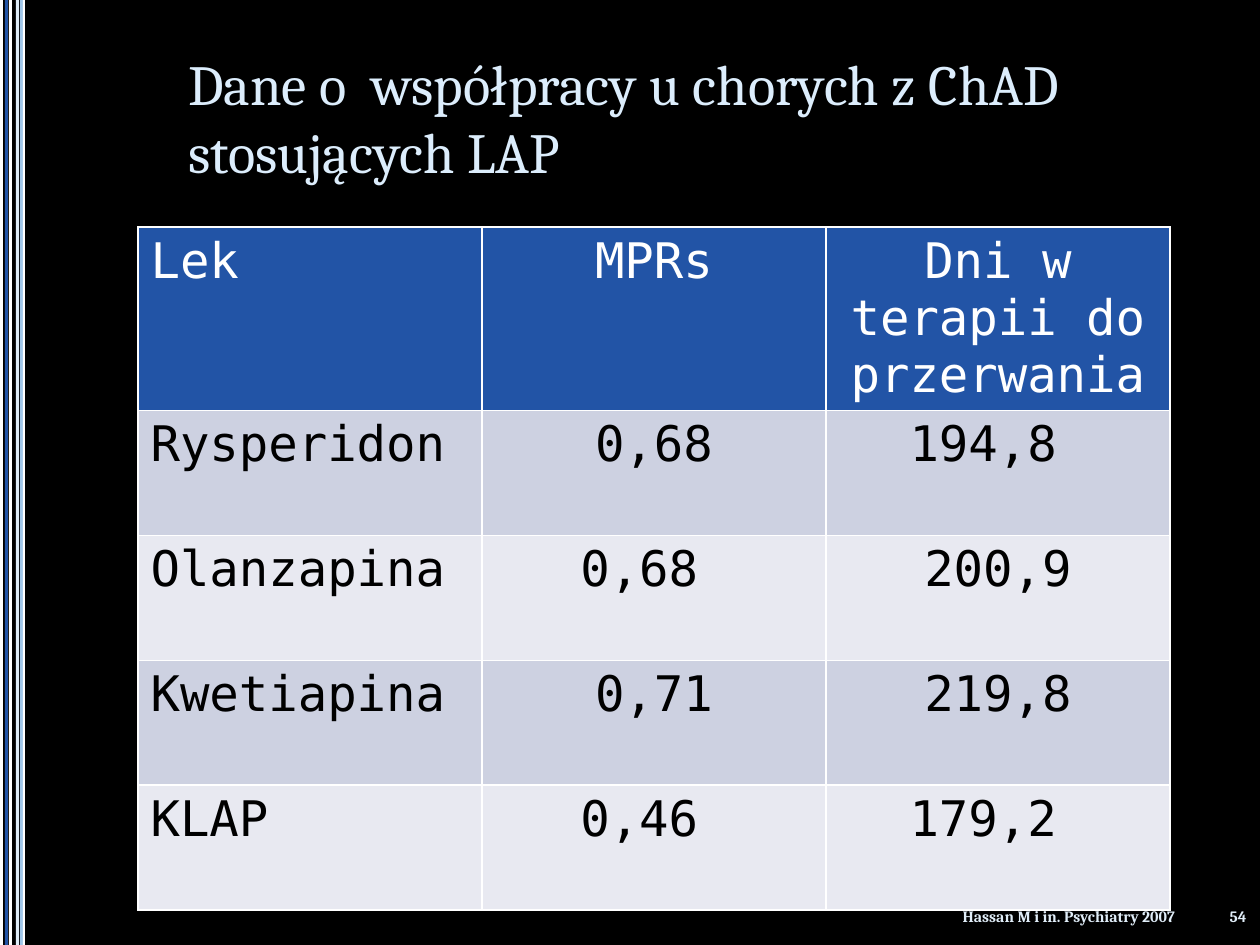
from pptx import Presentation
from pptx.dml.color import RGBColor
from pptx.enum.shapes import MSO_SHAPE
from pptx.enum.text import MSO_ANCHOR, MSO_AUTO_SIZE, PP_ALIGN
from pptx.oxml import parse_xml
from pptx.oxml.ns import nsdecls
from pptx.util import Emu, Pt

PX = 914400 / 126
COLORS = {
    "black": "000000", "white": "FFFFFF", "blue": "2254A6", "sky": "9FC6E9",
    "ice": "E0EDF8", "title": "DCEDFC", "band": "CDD1E1", "light": "E8E9F1",
}


def px(*lengths):
    return [Emu(round(length * PX)) for length in lengths]


def style(paragraph, font_name, size, color, align, bold=False):
    paragraph.alignment = align
    for span in paragraph.runs:
        span.font.name = font_name
        span.font.size = Pt(size)
        span.font.bold = bold
        span.font.color.rgb = RGBColor.from_string(COLORS[color])


deck = Presentation()
deck.slide_width, deck.slide_height = px(1260, 945)
page = deck.slides.add_slide(deck.slide_layouts[5])
page.background.fill.solid()
page.background.fill.fore_color.rgb = RGBColor.from_string(COLORS["black"])

# Vertical stripes along the left edge: left, width, colour
stripes = [
    (0, 3, "white"), (9, 3, "white"), (14, 1, "black"), (16, 3, "ice"),
    (20, 3, "sky"), (23, 2, "white"), (5, 3, "blue"),
]
for left, width, color in stripes:
    stripe = page.shapes.add_shape(MSO_SHAPE.RECTANGLE, *px(left, 0, width, 945))
    stripe.shadow.inherit = False
    stripe.fill.solid()
    stripe.fill.fore_color.rgb = RGBColor.from_string(COLORS[color])
    stripe.line.fill.background()

# Title
title = page.shapes.title
title.left, title.top, title.width, title.height = px(163, 38, 1033, 157)
frame = title.text_frame
frame.text = "Dane o  współpracy u chorych z ChAD stosujących LAP"
frame.auto_size = MSO_AUTO_SIZE.NONE
frame.word_wrap = True
frame.vertical_anchor = MSO_ANCHOR.MIDDLE
frame.margin_left, frame.margin_top, frame.margin_right, frame.margin_bottom = px(25, 25, 25, 25)
style(frame.paragraphs[0], "Cambria", 32.4, "title", PP_ALIGN.LEFT)

# Adherence table
rows = [
    ("Lek", "MPRs", "Dni w terapii do przerwania"),
    ("Rysperidon", "0,68", "194,8 "),
    ("Olanzapina", "0,68 ", "200,9"),
    ("Kwetiapina", "0,71", "219,8"),
    ("KLAP", "0,46 ", "179,2 "),
]
table = page.shapes.add_table(len(rows), 3, *px(138, 227, 1032, 683)).table
for column in table.columns:
    column.width = px(344)[0]
for r, values in enumerate(rows):
    table.rows[r].height = px(125 if r else 183)[0]
    fill = "blue" if r == 0 else "band" if r % 2 else "light"
    for c, value in enumerate(values):
        cell = table.cell(r, c)
        cell.text = value
        cell.fill.solid()
        cell.fill.fore_color.rgb = RGBColor.from_string(COLORS[fill])
        style(cell.text_frame.paragraphs[0], "DejaVu Sans Mono", 28,
              "black" if r else "white", PP_ALIGN.CENTER if c else PP_ALIGN.LEFT)
        # Borders come before the fill in the cell properties
        properties = cell._tc.get_or_add_tcPr()
        for position, side in enumerate("LRTB"):
            properties.insert(position, parse_xml(
                f'<a:ln{side} {nsdecls("a")} w="{Pt(1)}"><a:solidFill>'
                f'<a:srgbClr val="{COLORS["white"]}"/></a:solidFill></a:ln{side}>'))

# Source and slide number
for left, width, text in [(788, 399, "Hassan M i in. Psychiatry 2007"), (1196, 63, "54")]:
    box = page.shapes.add_textbox(*px(left, 897, width, 38))
    frame = box.text_frame
    frame.text = text
    frame.word_wrap = True
    frame.vertical_anchor = MSO_ANCHOR.MIDDLE
    style(frame.paragraphs[0], "Cambria", 9, "ice", PP_ALIGN.RIGHT, bold=True)

deck.save("out.pptx")
